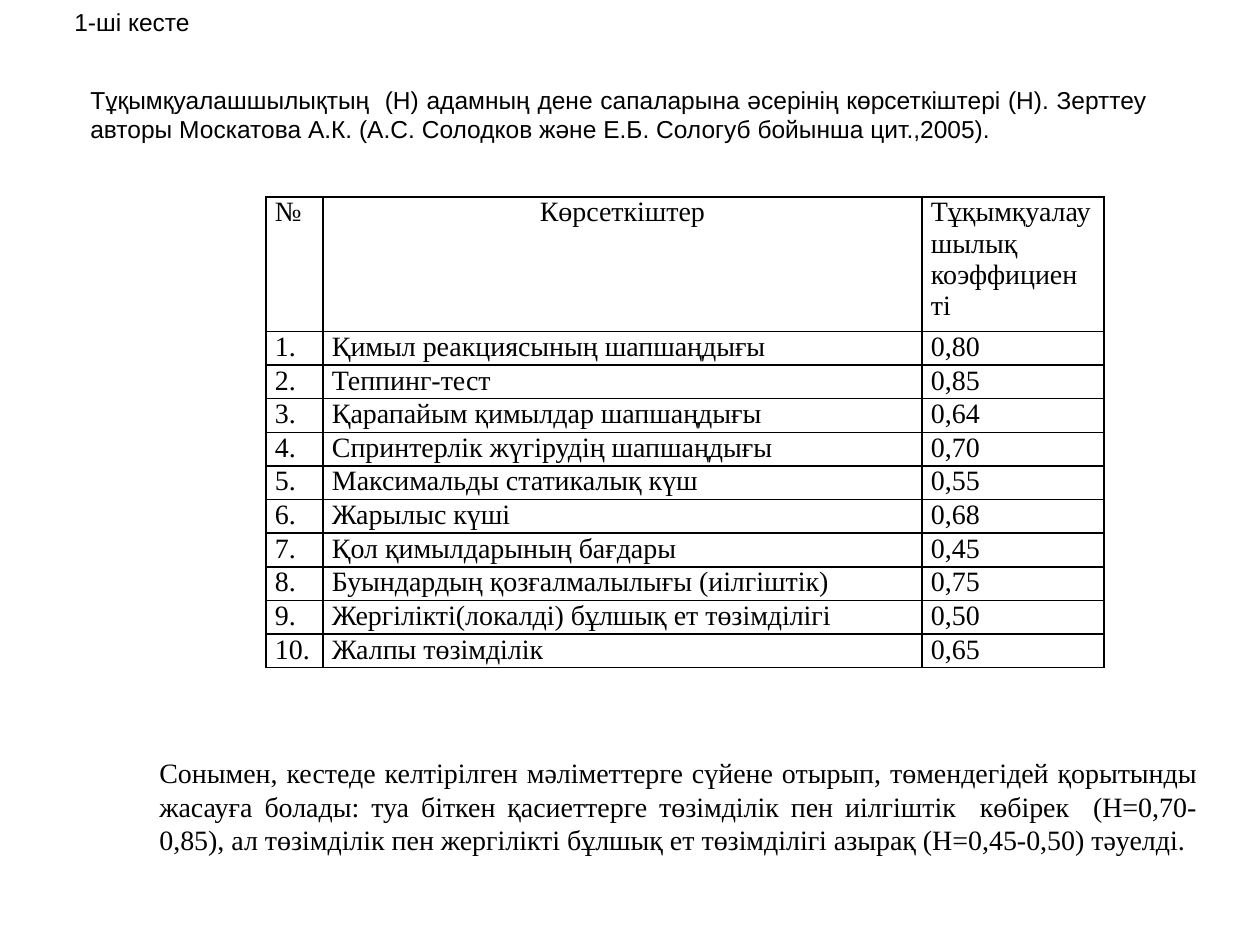
import pptx
import pptx.util
import pptx.dml.color
import pptx.enum.text
import pptx.oxml
import pptx.oxml.ns

ALIGN = pptx.enum.text.PP_ALIGN
ANCHOR = pptx.enum.text.MSO_ANCHOR
FIT = pptx.enum.text.MSO_AUTO_SIZE
COLORS = {"ink": "000000", "paper": "FFFFFF"}
SANS = {"name": "Arial", "size": pptx.util.Pt(14)}
SERIF = {"name": "Times New Roman", "size": pptx.util.Pt(16)}

LABEL = "1-ші кесте"
TITLE = ("Тұқымқуалашшылықтың  (Н) адамның дене сапаларына әсерінің көрсеткіштері (Н). "
         "Зерттеу авторы Москатова А.К. (А.С. Солодков және Е.Б. Сологуб бойынша цит.,2005).")
CONCLUSION = ("Сонымен, кестеде келтірілген мәліметтерге сүйене отырып, төмендегідей "
              "қорытынды жасауға болады: туа біткен қасиеттерге төзімділік пен иілгіштік  "
              "көбірек  (Н=0,70-0,85), ал төзімділік пен жергілікті бұлшық ет төзімділігі "
              "азырақ (Н=0,45-0,50) тәуелді.")
HEADER = ("№", "Көрсеткіштер", "Тұқымқуалаушылық коэффициен\nті")
INDICATORS = [
    ("Қимыл реакциясының шапшаңдығы", "0,80"),
    ("Теппинг-тест", "0,85"),
    ("Қарапайым қимылдар шапшаңдығы", "0,64"),
    ("Спринтерлік жүгірудің шапшаңдығы", "0,70"),
    ("Максимальды статикалық күш", "0,55"),
    ("Жарылыс күші", "0,68"),
    ("Қол қимылдарының бағдары", "0,45"),
    ("Буындардың қозғалмалылығы (иілгіштік)", "0,75"),
    ("Жергілікті(локалді) бұлшық ет төзімділігі", "0,50"),
    ("Жалпы төзімділік", "0,65"),
]
COLUMNS = (57, 599, 182)
TABLE_LEFT, TABLE_TOP, TABLE_HEIGHT, HEADER_HEIGHT = 266, 197, 470, 134


def px(n):
    return pptx.util.Emu(round(n * 914400 / 126))


def set_text(tf, text, font, align=ALIGN.JUSTIFY):
    tf.text = text
    for p in tf.paragraphs:
        p.alignment = align
        for r in p.runs:
            r.font.color.rgb = pptx.dml.color.RGBColor.from_string(COLORS["ink"])
            for key, value in font.items():
                setattr(r.font, key, value)


def add_text(slide, box, text, font, **frame):
    tf = slide.shapes.add_textbox(*map(px, box)).text_frame
    set_text(tf, text, font)
    settings = {"word_wrap": True, "vertical_anchor": ANCHOR.MIDDLE, **frame}
    for key, value in settings.items():
        setattr(tf, key, value)
    return tf


def add_borders(cell):
    tc_pr = cell._tc.get_or_add_tcPr()
    for i, side in enumerate(("lnL", "lnR", "lnT", "lnB")):
        tc_pr.insert(i, pptx.oxml.parse_xml(
            f'<a:{side} {pptx.oxml.ns.nsdecls("a")} w="12700"><a:solidFill>'
            f'<a:srgbClr val="{COLORS["ink"]}"/></a:solidFill></a:{side}>'))


def add_indicator_table(slide):
    rows = [HEADER] + [(f"{i}.", *row) for i, row in enumerate(INDICATORS, 1)]
    table = slide.shapes.add_table(
        len(rows), len(COLUMNS), px(TABLE_LEFT), px(TABLE_TOP),
        px(sum(COLUMNS)), px(TABLE_HEIGHT)).table
    for column, width in zip(table.columns, COLUMNS):
        column.width = px(width)
    body_height = (TABLE_HEIGHT - HEADER_HEIGHT) / len(INDICATORS)
    margins = {"margin_left": px(9), "margin_right": px(9), "margin_top": 0, "margin_bottom": 0}
    for i, row in enumerate(rows):
        table.rows[i].height = px(body_height if i else HEADER_HEIGHT)
        for j, text in enumerate(row):
            cell = table.cell(i, j)
            centred = i == 0 and j == 1
            set_text(cell.text_frame, text, {**SERIF, "bold": False},
                     ALIGN.CENTER if centred else ALIGN.JUSTIFY)
            for key, value in margins.items():
                setattr(cell, key, value)
            cell.fill.solid()
            cell.fill.fore_color.rgb = pptx.dml.color.RGBColor.from_string(COLORS["paper"])
            add_borders(cell)


def main():
    prs = pptx.Presentation()
    prs.slide_width, prs.slide_height = px(1260), px(945)
    slide = prs.slides.add_slide(prs.slide_layouts[6])
    add_text(slide, (78, 78, 1082, 72), TITLE, SANS)
    add_text(slide, (147, 748, 1063, 152), CONCLUSION, SERIF, margin_bottom=px(42))
    add_indicator_table(slide)
    tf = add_text(slide, (0, 0, 204, 43), LABEL, SANS,
                  word_wrap=False, auto_size=FIT.SHAPE_TO_FIT_TEXT)
    tf.paragraphs[0]._p.get_or_add_pPr().set("indent", str(px(62)))
    prs.save("out.pptx")


if __name__ == "__main__":
    main()
